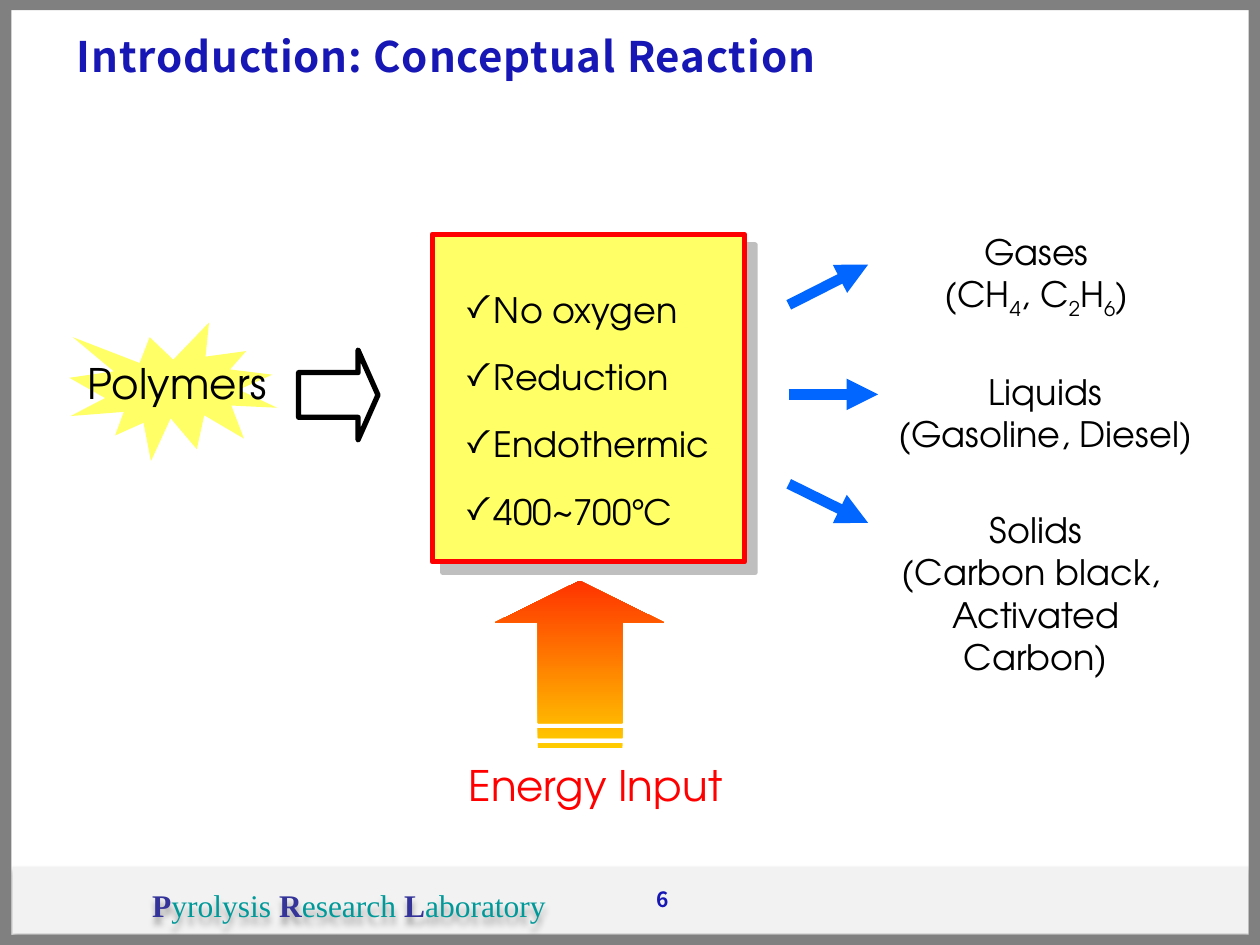
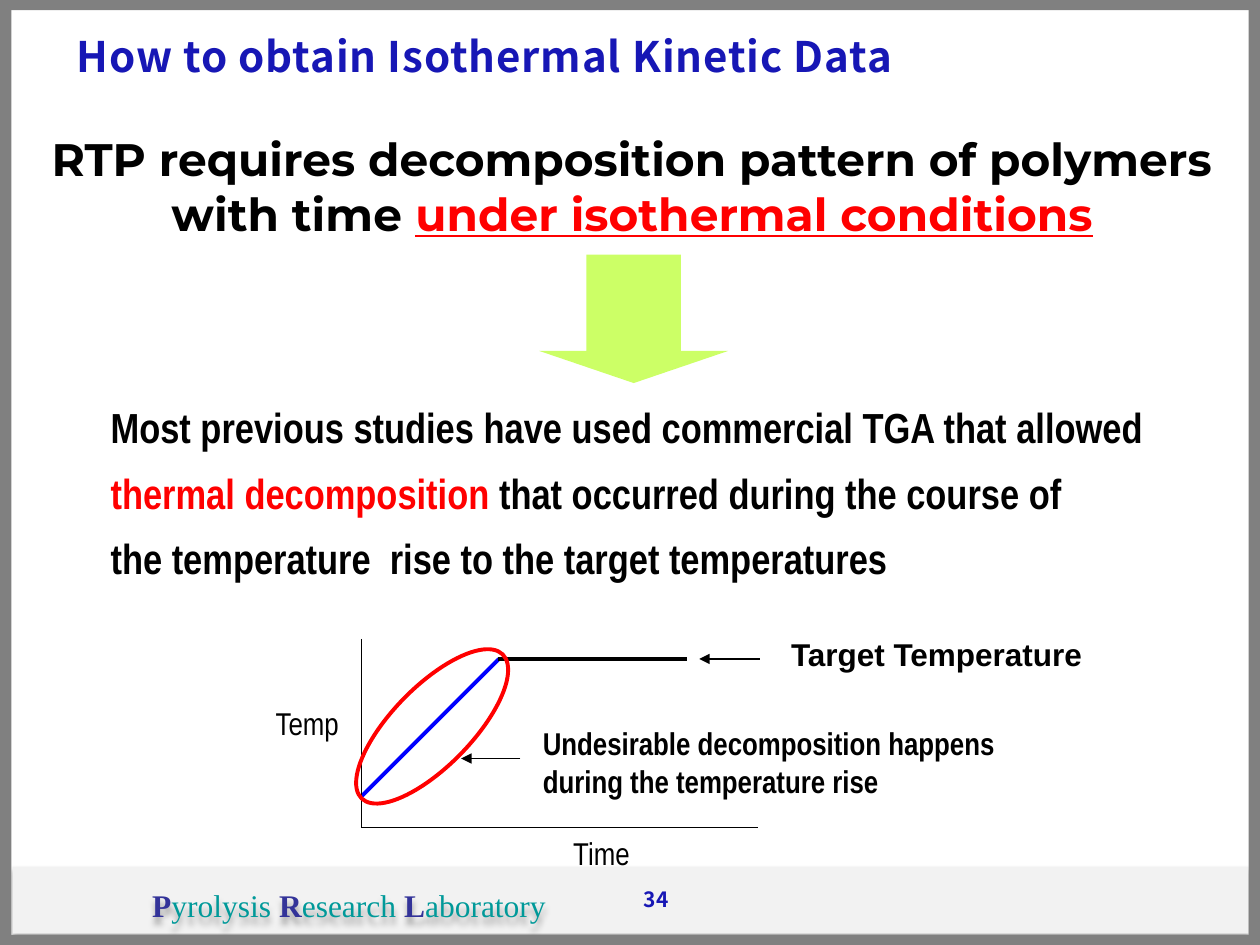
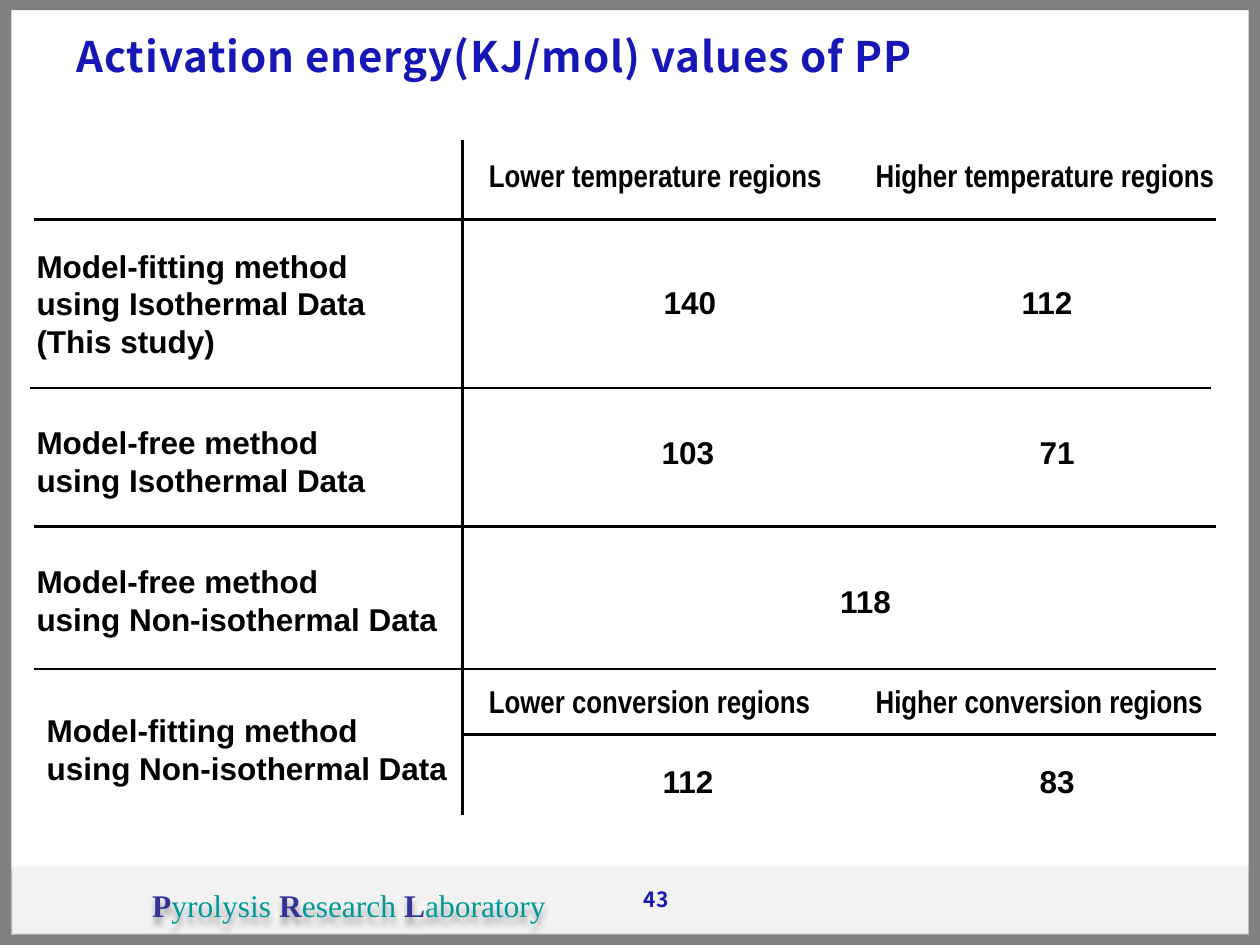
from lxml.etree import SubElement
from pptx import Presentation
from pptx.dml.color import RGBColor
from pptx.enum.shapes import MSO_CONNECTOR, MSO_SHAPE
from pptx.enum.text import MSO_ANCHOR, PP_ALIGN
from pptx.oxml.ns import qn
from pptx.util import Inches, Pt

COLORS = {
    "title": "1717B5", "frame": "808080", "band": "F2F2F2",
    "initial": "333399", "lab": "009999", "text": "000000",
    "accent": "FF0000", "reactor": "FFFF66", "product": "0066FF",
    "heat_low": "FFCC00", "heat_high": "FF3300", "step": "CCFF66",
    "ramp": "0000FF",
}
TITLE_FONT = "Noto Sans CJK KR"
REACTION_FONT = "TeX Gyre Adventor"
NARROW_FONT = "Arial Narrow"
CENTER, RIGHT = PP_ALIGN.CENTER, PP_ALIGN.RIGHT

FRAME_BARS = [(0, 0, 0.09, 7.5), (9.91, 0, 0.09, 7.5), (0, 0, 10, 0.08), (0, 7.42, 10, 0.08)]
LAB_NAME = ["Pyrolysis ", "Research ", "Laboratory"]

CONDITIONS = ["No oxygen", "Reduction", "Endothermic", "400~700℃"]
SUBSCRIPT = {"baseline": -25000}
PRODUCTS = [
    ((7.36, 1.78, 1.73, 0.77),
     ["Gases", [("(CH", {}), ("4", SUBSCRIPT), (", C", {}), ("2", SUBSCRIPT),
                ("H", {}), ("6", SUBSCRIPT), (")", {})]]),
    ((7, 2.89, 2.59, 0.77), ["Liquids", "(Gasoline, Diesel)"]),
    ((6.88, 3.99, 2.68, 1.11), ["Solids", "(Carbon black, ", "Activated Carbon)"]),
]
PRODUCT_ARROWS = [((6.26, 2.42), (6.89, 2.1)), ((6.26, 3.13), (6.97, 3.13)),
                  ((6.26, 3.84), (6.89, 4.15))]
HEAT_ARROW = [(3.93, 4.94), (4.27, 4.94), (4.27, 5.74), (4.94, 5.74),
              (4.94, 4.94), (5.27, 4.94), (4.6, 4.61)]
HEAT_STRIPES = [(5.78, 5.86), (5.9, 5.94)]

REQUIREMENT = [[("RTP requires decomposition pattern of polymers with time ", {}),
                ("under isothermal conditions", {"color": "accent", "underline": True})]]
PREVIOUS_STUDIES = [
    "Most previous studies have used commercial TGA that allowed",
    [("thermal decomposition", {"color": "accent"}),
     (" that occurred during the course of", {})],
    "the temperature  rise to the target temperatures",
]
AXES = [((2.87, 5.07), (2.87, 6.57)), ((2.87, 6.57), (6.02, 6.57))]
POINTERS = [((6.03, 5.23), (5.55, 5.23)), ((4.13, 6.02), (3.66, 6.02))]

ENERGY_ROWS = [
    ["", "Lower temperature regions", "Higher temperature regions"],
    ["Model-fitting method\nusing Isothermal Data\n(This study)", "140", "112"],
    ["Model-free method\nusing Isothermal Data", "103", "71"],
    ["Model-free method\nusing Non-isothermal Data", "118", ""],
    ["Model-fitting method\nusing Non-isothermal Data",
     "Lower conversion regions", "Higher conversion regions"],
    ["", "112", "83"],
]
ROW_EDGES = [1.11, 1.74, 3.08, 4.18, 5.31, 5.83, 6.47]
COLUMN_EDGES = [0.27, 3.67, 6.85, 9.67]
MERGES = [((3, 1), (3, 2)), ((4, 0), (5, 0))]
HEADER_ROWS = (0, 4)
INDENTS = [(0.02, 0.21, 0.1), (0.02, 0.43, 0.1), (0.02, 0.4, 0.26),
           (0.02, 0.4, 0), (0.1, 0.21, 0.1), (0, 0.4, 0.26)]
LABEL_DROPS = [0, 0, 0.03, 0.02, 0.06, 0]
VALUE_DROPS = [0, 0, -0.03, 0.04, 0.03, 0.06]
RULES = [((3.67, 1.11), (3.67, 6.47))] + [
    ((start, y), (end, y)) for y, start, end in zip(
        ROW_EDGES[1:-1], (0.27, 0.24, 0.27, 0.27, 3.66), (9.65, 9.61, 9.65, 9.65, 9.65))]
NO_TABLE_STYLE = "{2D5ABB26-0587-4C30-8999-92F81FD0307C}"


def rgb(name):
    return RGBColor.from_string(COLORS[name])


def inches(values):
    return [Inches(value) for value in values]


def style_run(run, size, font, color="text", bold=False, underline=False,
              baseline=0, spacing=0):
    run.font.size = Pt(size)
    run.font.name = font
    run.font.bold = bold
    run.font.color.rgb = rgb(color)
    if underline:
        run.font.underline = True
    for attribute, value in (("baseline", baseline), ("spc", spacing)):
        if value:
            run.font._element.set(attribute, str(value))


def write(frame, paragraphs, size, font, align=None, line_spacing=None, bullet=None, **style):
    frame.text = "\n" * (len(paragraphs) - 1)
    for paragraph, content in zip(frame.paragraphs, paragraphs):
        if bullet:
            properties = paragraph._p.get_or_add_pPr()
            properties.set("marL", str(Inches(0.23)))
            properties.set("indent", str(-Inches(0.23)))
            SubElement(properties, qn("a:buFont")).set("typeface", font)
            SubElement(properties, qn("a:buChar")).set("char", bullet)
        if align is not None:
            paragraph.alignment = align
        if line_spacing:
            paragraph.line_spacing = line_spacing
        pieces = [(content, {})] if isinstance(content, str) else content
        for text, changes in pieces:
            run = paragraph.add_run()
            run.text = text
            style_run(run, size, font, **{**style, **changes})


def add_text(slide, box, paragraphs, size, font, middle=False, **style):
    label = slide.shapes.add_textbox(*inches(box))
    frame = label.text_frame
    frame.word_wrap = True
    if middle:
        frame.vertical_anchor = MSO_ANCHOR.MIDDLE
    write(frame, paragraphs, size, font, **style)
    return label


def paint(shape, fill=None, line=None, width=1):
    shape.shadow.inherit = False
    if fill:
        shape.fill.solid()
        shape.fill.fore_color.rgb = rgb(fill)
    else:
        shape.fill.background()
    if line:
        shape.line.color.rgb = rgb(line)
        shape.line.width = Pt(width)
    else:
        shape.line.fill.background()


def add_figure(slide, kind, box, adjustments=(), **look):
    figure = slide.shapes.add_shape(kind, *inches(box))
    for index, value in enumerate(adjustments):
        figure.adjustments[index] = value
    paint(figure, **look)
    return figure


def cast_shadow(shape, color, opacity, blur, distance, angle):
    shape.shadow.inherit = False
    effects = shape._element.spPr.find(qn("a:effectLst"))
    shadow = SubElement(effects, qn("a:outerShdw"), blurRad=str(Pt(blur)),
                        dist=str(Pt(distance)), dir=str(angle * 60000),
                        algn="tl", rotWithShape="0")
    tint = SubElement(shadow, qn("a:srgbClr"), val=COLORS[color])
    SubElement(tint, qn("a:alpha"), val=str(opacity * 1000))


def add_line(slide, start, end, width, color="text", arrow=False):
    line = slide.shapes.add_connector(MSO_CONNECTOR.STRAIGHT, *inches(start + end))
    line.line.color.rgb = rgb(color)
    line.line.width = Pt(width)
    if arrow:
        SubElement(line.line._get_or_add_ln(), qn("a:tailEnd"), type="triangle")
    SubElement(line._element.spPr, qn("a:effectLst"))


def add_page(deck, title, number):
    slide = deck.slides.add_slide(deck.slide_layouts[6])
    band = add_figure(slide, MSO_SHAPE.RECTANGLE, (0.1, 6.88, 9.81, 0.53), fill="band")
    cast_shadow(band, "text", 32, 3.5, 2.2, 90)
    lab_runs = []
    for word in LAB_NAME:
        lab_runs += [(word[0], {"color": "initial", "bold": True}), (word[1:], {})]
    lab = add_text(slide, (1.09, 6.98, 3.36, 0.4), [lab_runs], 18, "Times New Roman",
                   middle=True, align=CENTER, color="lab")
    cast_shadow(lab, "text", 32, 3.5, 4, 90)
    for bar in FRAME_BARS:
        add_figure(slide, MSO_SHAPE.RECTANGLE, bar, fill="frame")
    heading = {"font": TITLE_FONT, "middle": True, "color": "title", "bold": True, "spacing": 50}
    add_text(slide, (0.51, 0.17, 9.02, 0.55), [title], 24, **heading)
    add_text(slide, (4.49, 6.94, 0.92, 0.4), [str(number)], 12, align=RIGHT, **heading)
    return slide


def add_heat_arrow(slide):
    stripe_left, stripe_right = HEAT_ARROW[1][0], HEAT_ARROW[3][0]
    outlines = [HEAT_ARROW] + [
        [(stripe_left, bottom), (stripe_right, bottom), (stripe_right, top), (stripe_left, top)]
        for top, bottom in HEAT_STRIPES]
    builder = slide.shapes.build_freeform(*inches(outlines[0][0]))
    for index, outline in enumerate(outlines):
        points = [inches(point) for point in outline]
        if index:
            builder.move_to(*points[0])
        builder.add_line_segments(points[1:], close=True)
    heat = builder.convert_to_shape()
    paint(heat)
    heat.fill.gradient()
    heat.fill.gradient_angle = 90
    for stop, color in zip(heat.fill.gradient_stops, ("heat_low", "heat_high")):
        stop.color.rgb = rgb(color)


def build_reaction(deck):
    slide = add_page(deck, "Introduction: Conceptual Reaction", 6)
    add_figure(slide, MSO_SHAPE.EXPLOSION1, (0.55, 2.56, 1.65, 1.1), fill="reactor")
    add_heat_arrow(slide)
    add_text(slide, (3.62, 5.98, 2.29, 0.5), ["Energy Input"], 24, REACTION_FONT, color="accent")
    add_text(slide, (0.55, 2.79, 1.71, 0.5), ["Polymers"], 24, REACTION_FONT, align=CENTER)
    add_figure(slide, MSO_SHAPE.RIGHT_ARROW, (2.37, 2.78, 0.63, 0.71), (0.5, 0.25),
               line="text", width=3)
    for start, end in PRODUCT_ARROWS:
        add_line(slide, start, end, 6, "product", arrow=True)
    for box, product in PRODUCTS:
        add_text(slide, box, product, 20, REACTION_FONT, align=CENTER)
    reactor = add_figure(slide, MSO_SHAPE.RECTANGLE, (3.43, 1.86, 2.48, 2.6),
                         fill="reactor", line="accent", width=3)
    cast_shadow(reactor, "frame", 50, 0, 8.5, 45)
    add_text(slide, (3.59, 2.04, 2.18, 2.26), CONDITIONS, 20, REACTION_FONT,
             line_spacing=1.6, bullet="✓")


def build_kinetics(deck):
    slide = add_page(deck, "How to obtain Isothermal Kinetic Data", 34)
    add_figure(slide, MSO_SHAPE.DOWN_ARROW, (4.28, 2.02, 1.5, 1.02), (0.5, 0.25), fill="step")
    add_text(slide, (0.78, 3.02, 8.57, 1.68), PREVIOUS_STUDIES, 24, NARROW_FONT,
             line_spacing=1.3, bold=True)
    add_line(slide, (2.87, 6.32), (3.96, 5.23), 2.25, "ramp")
    add_line(slide, (3.95, 5.23), (5.45, 5.23), 2.25)
    for start, end in AXES:
        add_line(slide, start, end, 0.75)
    for start, end in POINTERS:
        add_line(slide, start, end, 0.75, arrow=True)
    add_text(slide, (4.45, 6.57, 0.8, 0.4), ["Time"], 18, NARROW_FONT)
    add_text(slide, (2.09, 5.54, 0.8, 0.4), ["Temp"], 18, NARROW_FONT)
    add_text(slide, (6.18, 4.99, 2.7, 0.4), ["Target Temperature"], 18, "Arial", bold=True)
    ramp_ring = add_figure(slide, MSO_SHAPE.OVAL, (2.63, 5.45, 1.6, 0.63),
                           line="accent", width=2.25)
    ramp_ring.rotation = 314.4
    add_text(slide, (4.21, 5.7, 3.89, 0.71),
             ["Undesirable decomposition happens", "during the temperature rise"],
             18, NARROW_FONT, bold=True)
    add_text(slide, (0.12, 0.85, 9.8, 1.25), REQUIREMENT, 26, "Montserrat",
             middle=True, align=CENTER, bold=True)


def build_energies(deck):
    slide = add_page(deck, "Activation energy(KJ/mol) values of PP", 43)
    left, top = COLUMN_EDGES[0], ROW_EDGES[0]
    energies = slide.shapes.add_table(
        len(ENERGY_ROWS), len(ENERGY_ROWS[0]),
        *inches((left, top, COLUMN_EDGES[-1] - left, ROW_EDGES[-1] - top))).table
    energies.first_row = energies.horz_banding = False
    energies._tbl.tblPr.find(qn("a:tableStyleId")).text = NO_TABLE_STYLE
    for tracks, edges, size in ((energies.columns, COLUMN_EDGES, "width"),
                                (energies.rows, ROW_EDGES, "height")):
        for track, start, end in zip(tracks, edges, edges[1:]):
            setattr(track, size, Inches(round(end - start, 2)))
    for first, last in MERGES:
        energies.cell(*first).merge(energies.cell(*last))

    for row, entries in enumerate(ENERGY_ROWS):
        header = row in HEADER_ROWS
        for column, entry in enumerate(entries):
            drop = VALUE_DROPS[row] if column else LABEL_DROPS[row]
            cell = energies.cell(row, column)
            cell.fill.background()
            cell.vertical_anchor = MSO_ANCHOR.MIDDLE
            cell.margin_left = Inches(INDENTS[row][column])
            cell.margin_right = 0
            cell.margin_top = Inches(0.06 + drop)
            cell.margin_bottom = Inches(0.06 - drop)
            if entry:
                write(cell.text_frame, entry.split("\n"), 18,
                      NARROW_FONT if header and column else "Arial",
                      align=CENTER if column and not header else None,
                      line_spacing=None if column else 1.07, bold=True)
    for start, end in RULES:
        add_line(slide, start, end, 1.5)


def main():
    deck = Presentation()
    deck.slide_width, deck.slide_height = inches((10, 7.5))
    build_reaction(deck)
    build_kinetics(deck)
    build_energies(deck)
    deck.save("out.pptx")


if __name__ == "__main__":
    main()
